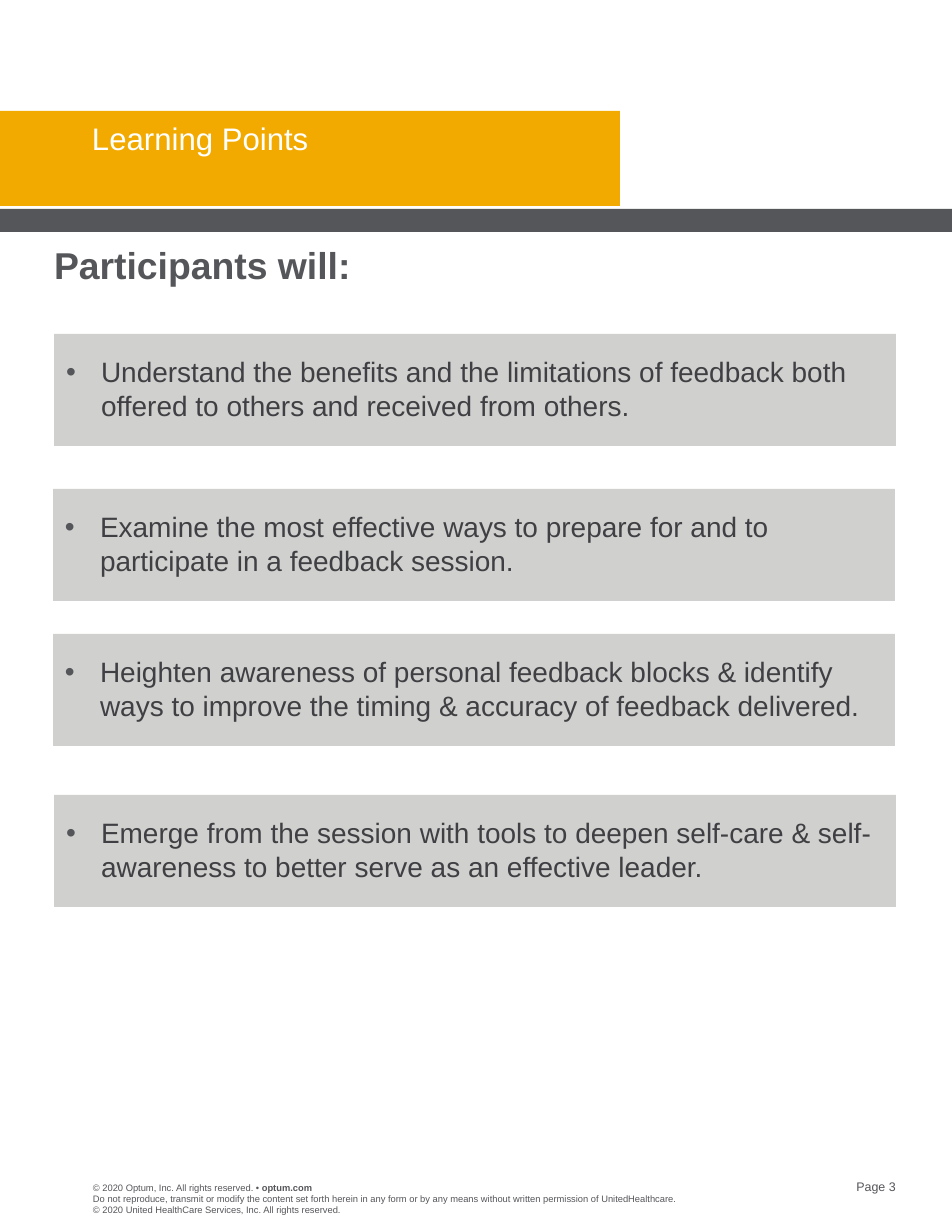
"""Build the Learning Points page with its four goal boxes."""
import pptx
import pptx.util
import pptx.dml.color
import pptx.enum.shapes
import pptx.enum.text
import lxml.etree
from dataclasses import dataclass


@dataclass(frozen=True)
class Theme:
    font: str = "Arial"
    gold: str = "F2AA00"
    slate: str = "55565A"
    pale: str = "D0D0CE"
    ink: str = "404044"
    white: str = "FFFFFF"
    title: int = 20
    head: int = 24
    body: int = 18
    page: int = 8
    small: int = 6


LOOK = Theme()
PX = 914400 / 112
WIDE, TALL = 952, 1232
TITLE = "Learning Points"
HEAD = "Participants will:"
GOALS = [
    (54, 334, "Understand the benefits and the limitations of feedback both "
     "offered to others and received from others."),
    (53, 489, "Examine the most effective ways to prepare for and to "
     "participate in a feedback session."),
    (53, 634, "Heighten awareness of personal feedback blocks & identify "
     "ways to improve the timing & accuracy of feedback delivered."),
    (54, 795, "Emerge from the session with tools to deepen self-care & "
     "self-awareness to better serve as an effective leader."),
]
GOAL_SIZE = (842, 112)
BARS = [((0, 111, 620, 95), LOOK.gold), ((0, 209, WIDE, 23), LOOK.slate)]
LEGAL = [("© 2020 Optum, Inc. All rights reserved. • ", False),
         ("optum.com", True)]
TERMS = ("Do not reproduce, transmit or modify the content set forth herein "
         "in any form or by any means without written permission of "
         "UnitedHealthcare. © 2020 United HealthCare Services, Inc. "
         "All rights reserved.")
ALIGN = pptx.enum.text.PP_ALIGN
ANCHOR = pptx.enum.text.MSO_ANCHOR


def emu(px):
    return pptx.util.Emu(round(px * PX))


def tint(code):
    return pptx.dml.color.RGBColor.from_string(code)


def write(shape, runs, size, color, align=ALIGN.LEFT, anchor=ANCHOR.TOP,
          pads=(0, 0, 0, 0)):
    frame = shape.text_frame
    frame.word_wrap = True
    frame.auto_size = pptx.enum.text.MSO_AUTO_SIZE.NONE
    frame.vertical_anchor = anchor
    (frame.margin_left, frame.margin_top,
     frame.margin_right, frame.margin_bottom) = map(emu, pads)
    para = frame.paragraphs[0]
    para.alignment = align
    for words, bold in runs:
        run = para.add_run()
        run.text = words
        run.font.name = LOOK.font
        run.font.size = pptx.util.Pt(size)
        run.font.bold = bold
        run.font.color.rgb = tint(color)
    return para


def add_text(slide, box, runs, size, color, **opts):
    shape = slide.shapes.add_textbox(*map(emu, box))
    return write(shape, runs, size, color, **opts)


def add_bar(slide, box, fill):
    kind = pptx.enum.shapes.MSO_SHAPE.RECTANGLE
    shape = slide.shapes.add_shape(kind, *map(emu, box))
    shape.shadow.inherit = False
    shape.fill.solid()
    shape.fill.fore_color.rgb = tint(fill)
    shape.line.fill.background()
    return shape


def add_dot(para, indent):
    props = para._p.get_or_add_pPr()
    props.set("marL", str(emu(indent)))
    props.set("indent", str(-emu(indent)))
    space = "{" + props.nsmap["a"] + "}"
    color = lxml.etree.SubElement(props, space + "buClr")
    lxml.etree.SubElement(color, space + "srgbClr", val=LOOK.slate)
    lxml.etree.SubElement(props, space + "buFont", typeface=LOOK.font)
    lxml.etree.SubElement(props, space + "buChar", char="•")


def add_title(slide):
    title = slide.shapes.title
    title.left, title.top, title.width, title.height = map(
        emu, (92, 124, 504, 68))
    para = write(title, [(TITLE, False)], LOOK.title, LOOK.white)
    para.line_spacing = 0.9
    slide.shapes._spTree.append(title._element)


def main():
    deck = pptx.Presentation()
    deck.slide_width, deck.slide_height = emu(WIDE), emu(TALL)
    slide = deck.slides.add_slide(deck.slide_layouts[5])
    for box, fill in BARS:
        add_bar(slide, box, fill)
    add_title(slide)
    add_text(slide, (54, 242, 842, 54), [(HEAD, True)], LOOK.head, LOOK.slate)
    for left, top, words in GOALS:
        shape = add_bar(slide, (left, top, *GOAL_SIZE), LOOK.pale)
        para = write(shape, [(words, False)], LOOK.body, LOOK.ink,
                     anchor=ANCHOR.MIDDLE, pads=(12, 0, 12, 3))
        add_dot(para, 35)
    add_text(slide, (93, 1182, 224, 11), LEGAL, LOOK.small, LOOK.slate)
    add_text(slide, (93, 1193, 588, 22), [(TERMS, False)],
             LOOK.small, LOOK.slate)
    add_text(slide, (805, 1179, 91, 15), [("Page 3", False)],
             LOOK.page, LOOK.slate, align=ALIGN.RIGHT)
    deck.save("out.pptx")


if __name__ == "__main__":
    main()
